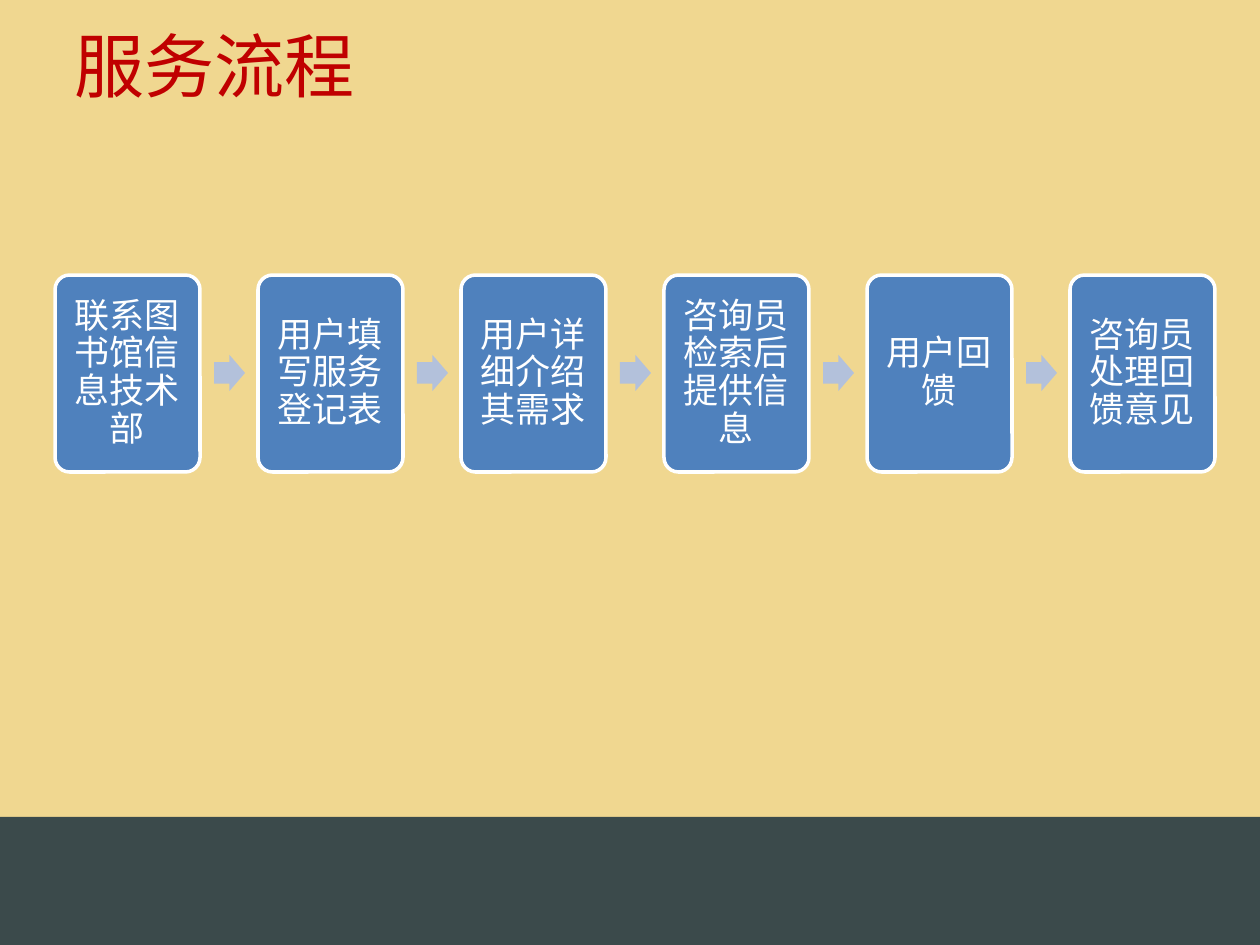
"""Build the service process slide: a title and six steps joined by arrows."""
from pptx import Presentation
from pptx.dml.color import RGBColor
from pptx.enum.shapes import MSO_SHAPE as Shape
from pptx.enum.text import MSO_ANCHOR as Anchor, PP_ALIGN as Align
from pptx.util import Pt

PX = 914400 / 126
SAND = RGBColor(0xF0, 0xD7, 0x90)
SLATE = RGBColor(0x3B, 0x4A, 0x4B)
RED = RGBColor(0xC0, 0x00, 0x00)
BLUE = RGBColor(0x4F, 0x81, 0xBD)
PALE_BLUE = RGBColor(0xB3, 0xC1, 0xDB)
WHITE = RGBColor(0xFF, 0xFF, 0xFF)

STEPS = [
    "联系图书馆信息技术部",
    "用户填写服务登记表",
    "用户详细介绍其需求",
    "咨询员检索后提供信息",
    "用户回馈",
    "咨询员处理回馈意见",
]
FIRST_LEFT, PITCH, ARROW_OFFSET = 55, 203, 159


def add_block(kind, bounds, color, adjustments=()):
    block = page.shapes.add_shape(kind, *(round(n * PX) for n in bounds))
    block.shadow.inherit = False
    block.fill.solid()
    block.fill.fore_color.rgb = color
    block.line.fill.background()
    for index, value in enumerate(adjustments):
        block.adjustments[index] = value
    return block


def write_text(box, text, size, color, frame_format, para_format):
    frame = box.text_frame
    for name, value in frame_format.items():
        setattr(frame, name, value)
    para = frame.paragraphs[0]
    for name, value in para_format.items():
        setattr(para, name, value)
    span = para.add_run()
    span.text = text
    span.font.name = "Calibri"
    span.font.size = Pt(size)
    span.font.color.rgb = color


deck = Presentation()
deck.slide_width, deck.slide_height = round(1260 * PX), round(945 * PX)
page = deck.slides.add_slide(deck.slide_layouts[6])
page.background.fill.solid()
page.background.fill.fore_color.rgb = SAND

add_block(Shape.RECTANGLE, (0, 817, 1260, 128), SLATE)

title = page.shapes.add_textbox(*(round(n * PX) for n in (25, 16, 640, 116)))
title_frame = {"word_wrap": True, "vertical_anchor": Anchor.TOP, "margin_left": round(50 * PX)}
write_text(title, "服务流程", 40, RED, title_frame, {"alignment": Align.LEFT})

step_frame = {"word_wrap": True, "vertical_anchor": Anchor.MIDDLE}
for side in ("left", "top", "right", "bottom"):
    step_frame[f"margin_{side}"] = round(10 * PX)
step_para = {"alignment": Align.CENTER, "line_spacing": 0.9}

for number, step in enumerate(STEPS):
    left = FIRST_LEFT + number * PITCH
    if number:
        arrow_left = left - PITCH + ARROW_OFFSET
        add_block(Shape.RIGHT_ARROW, (arrow_left, 355, 31, 36), PALE_BLUE, (0.6, 0.5))
    box = add_block(Shape.ROUNDED_RECTANGLE, (left, 275, 145, 197), BLUE, (0.1,))
    box.line.color.rgb = WHITE
    box.line.width = Pt(2)
    write_text(box, step, 20, WHITE, step_frame, step_para)

deck.save("out.pptx")
